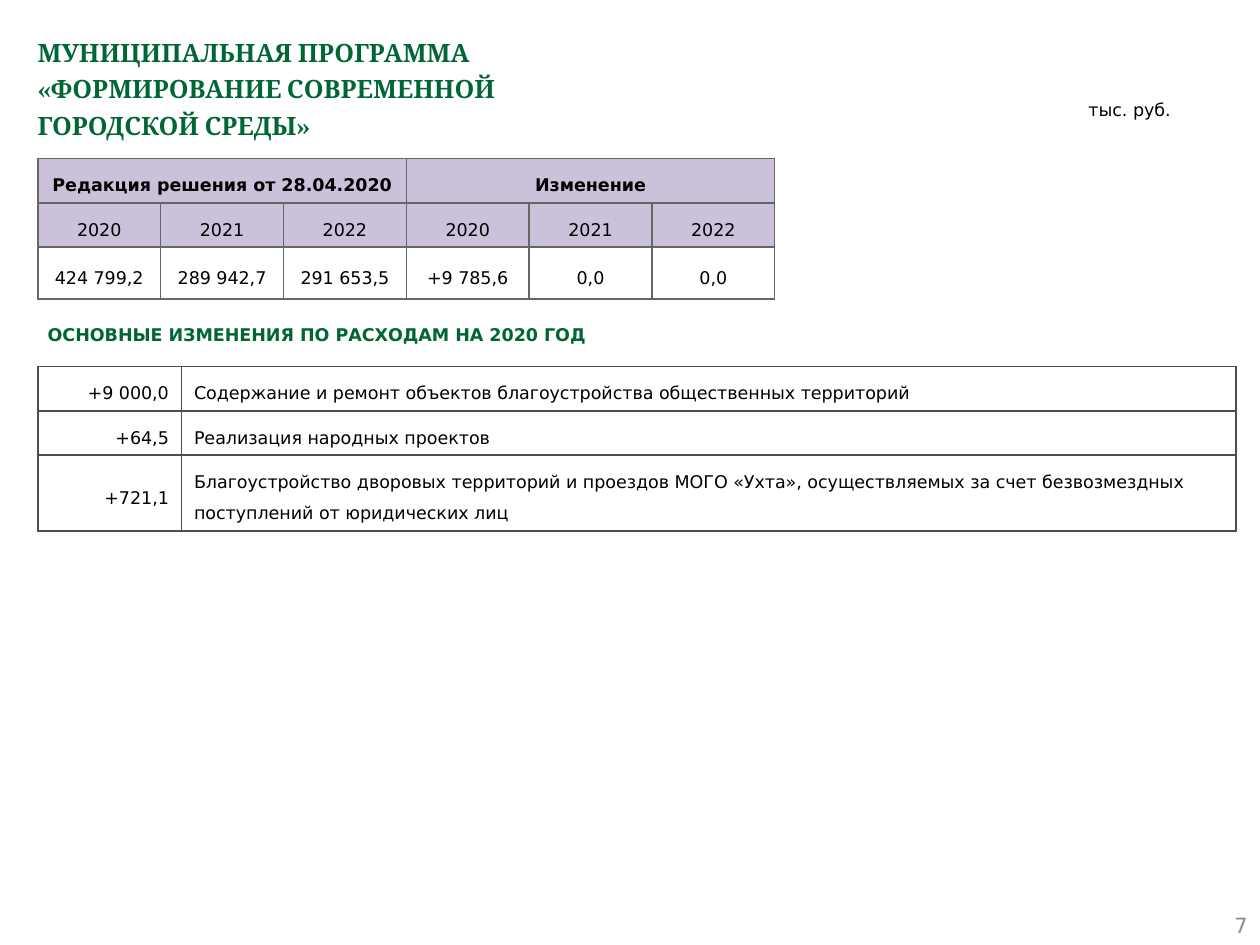
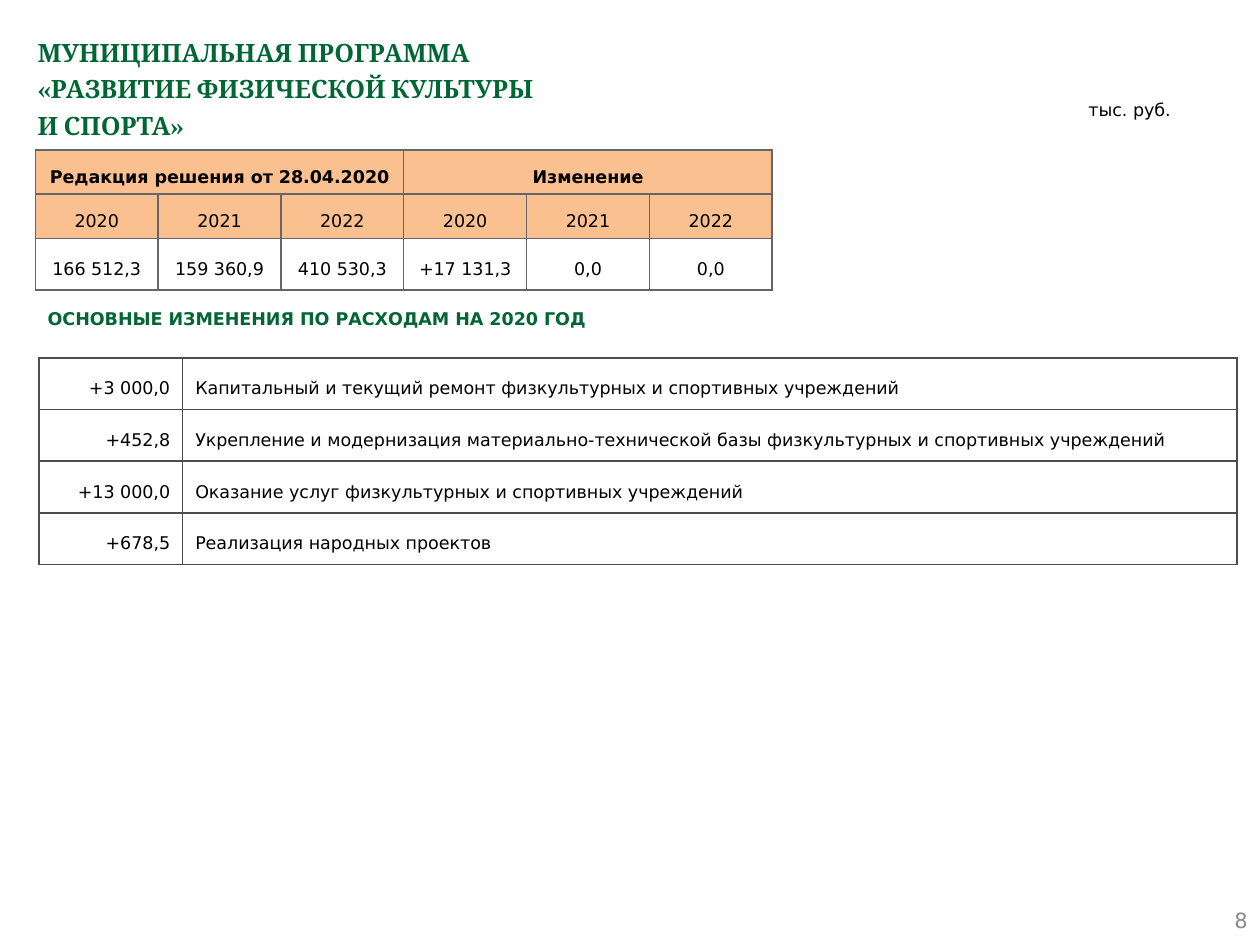
import pptx
import pptx.dml.color
import pptx.enum.shapes
import pptx.enum.text
import pptx.oxml
import pptx.oxml.ns
import pptx.util
from dataclasses import dataclass

Inches = pptx.util.Inches
Pt = pptx.util.Pt
ALIGN = pptx.enum.text.PP_ALIGN
ANCHOR = pptx.enum.text.MSO_ANCHOR

# Content
UNIT = "тыс. руб."
SUBTITLE = "ОСНОВНЫЕ ИЗМЕНЕНИЯ ПО РАСХОДАМ НА 2020 ГОД"
GROUPS = ["Редакция решения от 28.04.2020", "Изменение"]
YEARS = ["2020", "2021", "2022"]

PROGRAMMES = [
    dict(
        title="МУНИЦИПАЛЬНАЯ ПРОГРАММА\n«ФОРМИРОВАНИЕ СОВРЕМЕННОЙ\nГОРОДСКОЙ СРЕДЫ»",
        totals=["424 799,2", "289 942,7", "291 653,5", "+9 785,6", "0,0", "0,0"],
        changes=[
            ("+9 000,0", "Содержание и ремонт объектов благоустройства общественных территорий"),
            ("+64,5", "Реализация народных проектов"),
            ("+721,1", "Благоустройство дворовых территорий и проездов МОГО «Ухта», "
                       "осуществляемых за счет безвозмездных поступлений от юридических лиц"),
        ],
        change_rows=[0.34, 0.34, 0.59], header_fill="CCC1DA", page="7", page_top=7.14,
        totals_at=(0.3, 1.26), subtitle_at=(0.28, 2.44, 5.32, 0.43), changes_at=(0.3, 2.91),
    ),
    dict(
        title="МУНИЦИПАЛЬНАЯ ПРОГРАММА\n«РАЗВИТИЕ ФИЗИЧЕСКОЙ КУЛЬТУРЫ\nИ СПОРТА»",
        totals=["166 512,3", "159 360,9", "410 530,3", "+17 131,3", "0,0", "0,0"],
        changes=[
            ("+3 000,0", "Капитальный и текущий ремонт физкультурных и спортивных учреждений"),
            ("+452,8", "Укрепление и модернизация материально-технической базы "
                       "физкультурных и спортивных учреждений"),
            ("+13 000,0", "Оказание услуг физкультурных и спортивных учреждений"),
            ("+678,5", "Реализация народных проектов"),
        ],
        change_rows=[0.41] * 4, header_fill="FAC090", page="8", page_top=7.1,
        totals_at=(0.28, 1.19), subtitle_at=(0.28, 2.31, 4.92, 0.43), changes_at=(0.31, 2.84),
    ),
]


@dataclass(frozen=True)
class Theme:
    heading_font: str = "Cambria"
    body_font: str = "DejaVu Sans"
    green: str = "006633"
    black: str = "000000"
    grey: str = "8C8C8C"
    totals_border: str = "666666"
    changes_border: str = "4D4D4D"
    title_size: float = 14.4
    body_size: float = 10
    page_size: float = 12


THEME = Theme()
TOTALS_WIDTH = 5.85
TOTALS_ROWS = [0.35, 0.35, 0.41]
CHANGES_COLS = [1.14, 8.37]


def rgb(value):
    return pptx.dml.color.RGBColor.from_string(value)


def write(tf, text, *, font=THEME.body_font, size=THEME.body_size, color=THEME.black,
          bold=False, align=ALIGN.LEFT, spacing=1.0):
    """Fill a text frame, one paragraph per line of text."""
    tf.word_wrap = True
    for i, line in enumerate(text.split("\n")):
        p = tf.paragraphs[0] if i == 0 else tf.add_paragraph()
        p.alignment = align
        p.line_spacing = spacing
        r = p.add_run()
        r.text = line
        r.font.name = font
        r.font.size = Pt(size)
        r.font.bold = bold
        r.font.color.rgb = rgb(color)


def add_text(slide, box, text, anchor=ANCHOR.TOP, **fmt):
    sp = slide.shapes.add_textbox(*map(Inches, box))
    sp.text_frame.vertical_anchor = anchor
    write(sp.text_frame, text, **fmt)


def add_subtitle(slide, box):
    sp = slide.shapes.add_shape(pptx.enum.shapes.MSO_SHAPE.PENTAGON, *map(Inches, box))
    sp.adjustments[0] = 0
    sp.shadow.inherit = False
    sp.fill.background()
    sp.line.fill.background()
    sp.text_frame.vertical_anchor = ANCHOR.MIDDLE
    write(sp.text_frame, SUBTITLE, color=THEME.green, bold=True)


def set_borders(cell, color):
    pr = cell._tc.get_or_add_tcPr()
    for i, side in enumerate(("lnL", "lnR", "lnT", "lnB")):
        pr.insert(i, pptx.oxml.parse_xml(
            f'<a:{side} {pptx.oxml.ns.nsdecls("a")} w="{Pt(1)}"><a:solidFill>'
            f'<a:srgbClr val="{color}"/></a:solidFill></a:{side}>'))


def add_table(slide, at, cols, rows, border):
    """Add a plain bordered table without fills."""
    box = (*at, sum(cols), sum(rows))
    table = slide.shapes.add_table(len(rows), len(cols), *map(Inches, box)).table
    table.first_row = table.horz_banding = False
    for column, width in zip(table.columns, cols):
        column.width = Inches(width)
    for row, height in zip(table.rows, rows):
        row.height = Inches(height)
    for cell in table.iter_cells():
        cell.vertical_anchor = ANCHOR.MIDDLE
        cell.fill.background()
        set_borders(cell, border)
    return table


def add_totals(slide, at, totals, header_fill):
    count = len(totals)
    table = add_table(slide, at, [TOTALS_WIDTH / count] * count, TOTALS_ROWS,
                      THEME.totals_border)
    for cell in table.iter_cells():
        cell.margin_left = cell.margin_right = Inches(0.05)
        cell.margin_top = cell.margin_bottom = Inches(0.05)
    for r in range(2):
        for c in range(count):
            cell = table.cell(r, c)
            cell.fill.solid()
            cell.fill.fore_color.rgb = rgb(header_fill)
    # Group headings, each over its three years
    span = len(YEARS)
    for i, group in enumerate(GROUPS):
        cell = table.cell(0, i * span)
        cell.merge(table.cell(0, (i + 1) * span - 1))
        write(cell.text_frame, group, bold=True, align=ALIGN.CENTER, spacing=1.5)
    for r, values in enumerate((YEARS * len(GROUPS), totals), start=1):
        for c, value in enumerate(values):
            write(table.cell(r, c).text_frame, value, align=ALIGN.CENTER, spacing=1.5)


def add_changes(slide, at, changes, rows):
    table = add_table(slide, at, CHANGES_COLS, rows, THEME.changes_border)
    for r, change in enumerate(changes):
        for c, align in enumerate((ALIGN.RIGHT, ALIGN.LEFT)):
            write(table.cell(r, c).text_frame, change[c], align=align, spacing=1.5)


def add_programme(prs, item):
    slide = prs.slides.add_slide(prs.slide_layouts[6])
    # Title, page number and unit
    add_text(slide, (0.2, 0.2, 9.61, 0.79), item["title"], font=THEME.heading_font,
             size=THEME.title_size, color=THEME.green, bold=True, spacing=1.2)
    add_text(slide, (7.67, item["page_top"], 2.33, 0.4), item["page"], ANCHOR.MIDDLE,
             size=THEME.page_size, color=THEME.grey, align=ALIGN.RIGHT)
    add_text(slide, (8.54, 0.7, 1.01, 0.3), UNIT, spacing=1.2)
    # Changes under their subtitle, then totals
    add_subtitle(slide, item["subtitle_at"])
    add_changes(slide, item["changes_at"], item["changes"], item["change_rows"])
    add_totals(slide, item["totals_at"], item["totals"], item["header_fill"])


def main():
    prs = pptx.Presentation()
    prs.slide_width, prs.slide_height = Inches(10), Inches(7.5)
    for item in PROGRAMMES:
        add_programme(prs, item)
    prs.save("out.pptx")


if __name__ == "__main__":
    main()
